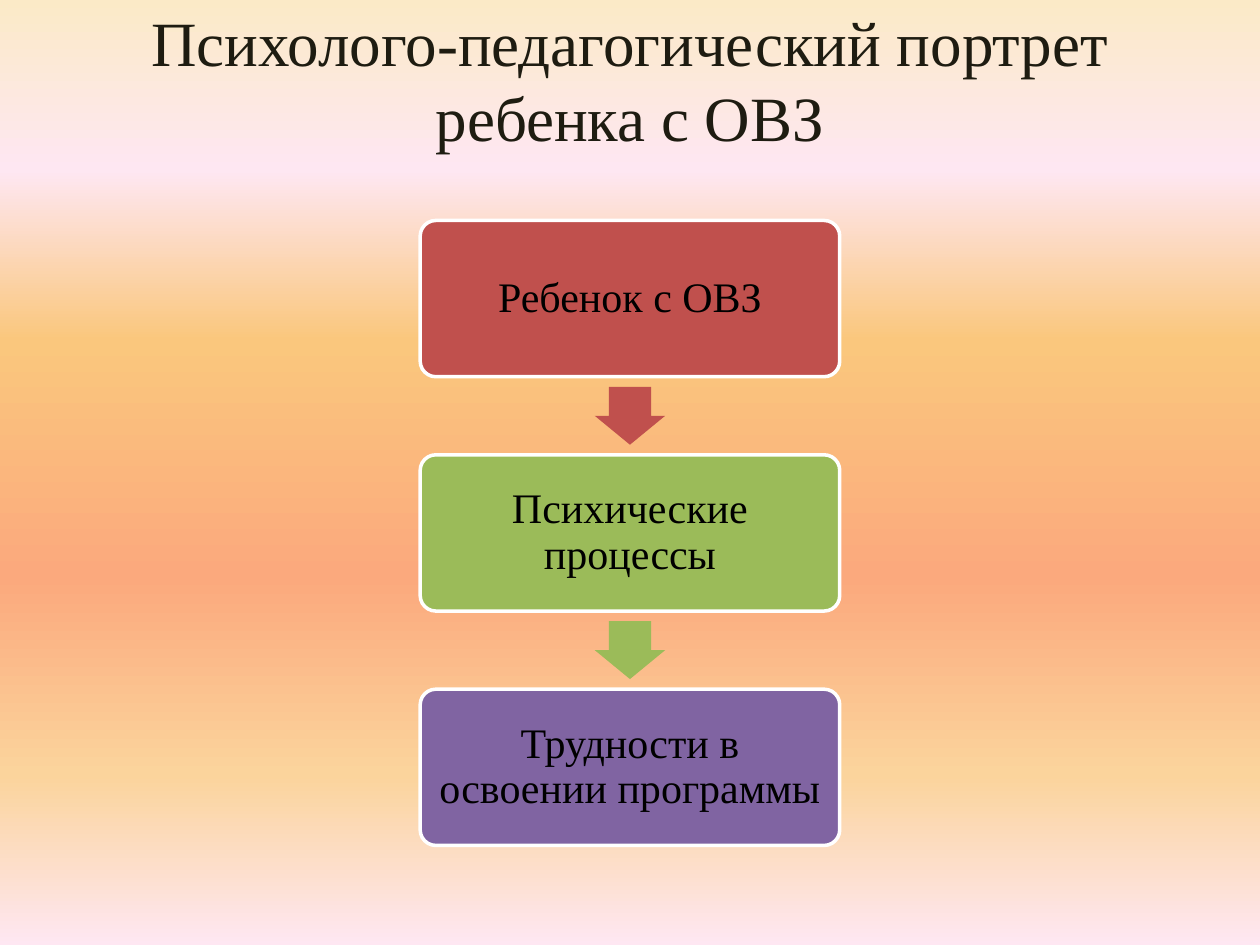
import pptx
import pptx.util
import pptx.oxml
import pptx.oxml.ns
import pptx.dml.color
import pptx.enum.shapes
import pptx.enum.text

Inches = pptx.util.Inches
Pt = pptx.util.Pt
KIND = pptx.enum.shapes.MSO_SHAPE

COLORS = {
    "title": "1E1C11", "text": "000000", "edge": "FFFFFF",
    "red": "C0504D", "green": "9BBB59", "violet": "8064A2",
}
STOPS = [(0, "FBEAC7"), (18, "FEE7F2"), (36, "FAC77D"),
         (61, "FBA97D"), (82, "FBD49C"), (100, "FEE7F2")]
STEPS = [("Ребенок с ОВЗ", "red"),
         ("Психические процессы", "green"),
         ("Трудности в освоении программы", "violet")]


class Deck:
    """Draw styled elements on the current slide."""

    def __init__(self, slide, face="Times New Roman"):
        self.slide = slide
        self.face = face

    def color(self, name):
        return pptx.dml.color.RGBColor.from_string(COLORS[name])

    def back(self, stops):
        fill = self.slide.background.fill
        fill.gradient()
        fill.gradient_angle = 270
        ns = pptx.oxml.ns
        row = self.slide.element.find(".//" + ns.qn("a:gsLst"))
        for stop in list(row):
            row.remove(stop)
        for pos, tint in stops:
            row.append(pptx.oxml.parse_xml(
                f'<a:gs {ns.nsdecls("a")} pos="{pos * 1000}">'
                f'<a:srgbClr val="{tint}"/></a:gs>'))

    def label(self, shape, text, size, name):
        frame = shape.text_frame
        frame.word_wrap = True
        frame.vertical_anchor = pptx.enum.text.MSO_ANCHOR.MIDDLE
        para = frame.paragraphs[0]
        para.text = text
        para.alignment = pptx.enum.text.PP_ALIGN.CENTER
        para.font.name = self.face
        para.font.size = Pt(size)
        para.font.color.rgb = self.color(name)
        return frame

    def title(self, text, x, y, w, h):
        box = self.slide.shapes.add_textbox(
            Inches(x), Inches(y), Inches(w), Inches(h))
        self.label(box, text, 36, "title")

    def shape(self, kind, x, y, w, h, name, *ratios):
        item = self.slide.shapes.add_shape(
            kind, Inches(x), Inches(y), Inches(w), Inches(h))
        item.shadow.inherit = False
        item.fill.solid()
        item.fill.fore_color.rgb = self.color(name)
        item.line.fill.background()
        for i, ratio in enumerate(ratios):
            item.adjustments[i] = ratio
        return item

    def card(self, text, x, y, w, h, name):
        item = self.shape(KIND.ROUNDED_RECTANGLE, x, y, w, h, name, 0.1)
        item.line.color.rgb = self.color("edge")
        item.line.width = Pt(2)
        frame = self.label(item, text, 24, "text")
        frame.margin_left = frame.margin_right = Inches(0.1)
        frame.margin_top = frame.margin_bottom = Inches(0.1)
        frame.paragraphs[0].line_spacing = 0.9

    def arrow(self, x, y, w, h, name):
        self.shape(KIND.DOWN_ARROW, x, y, w, h, name, 0.6, 0.5)


def main():
    prs = pptx.Presentation()
    prs.slide_width, prs.slide_height = Inches(10), Inches(7.5)
    deck = Deck(prs.slides.add_slide(prs.slide_layouts[6]))
    deck.back(STOPS)
    deck.title("Психолого-педагогический портрет ребенка с ОВЗ\v",
               0.5, 0.3, 9, 1.25)

    mid, top = 5, 1.75
    wide, high, gap = 3.33, 1.24, 0.62
    span, drop = 0.56, 0.46
    for i, (text, name) in enumerate(STEPS):
        y = top + i * (high + gap)
        deck.card(text, mid - wide / 2, y, wide, high, name)
        if i < len(STEPS) - 1:
            deck.arrow(mid - span / 2, y + high + (gap - drop) / 2,
                       span, drop, name)
    prs.save("out.pptx")


if __name__ == "__main__":
    main()
